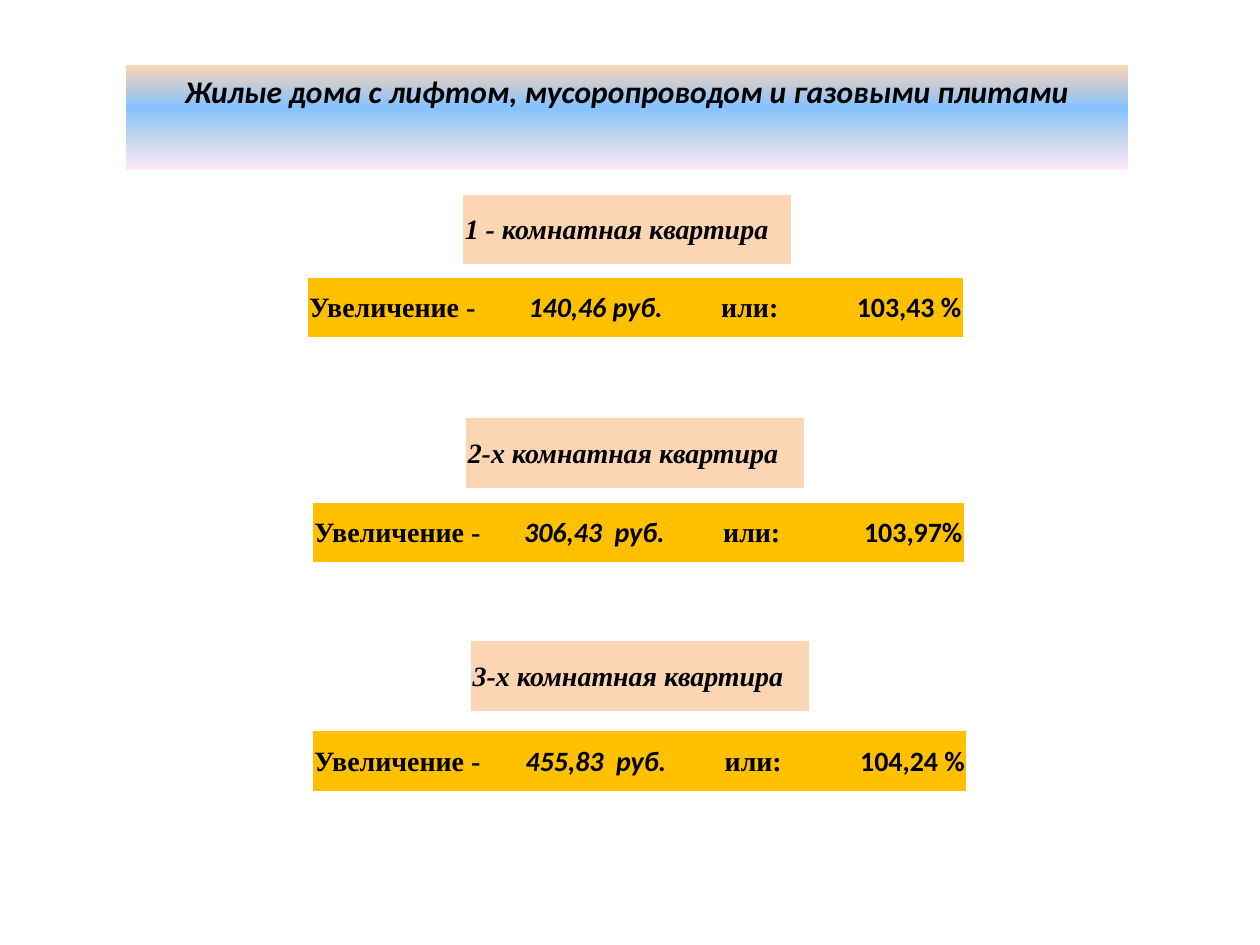
from lxml import etree
from pptx import Presentation
from pptx.dml.color import RGBColor
from pptx.enum.text import MSO_ANCHOR, MSO_AUTO_SIZE, PP_ALIGN
from pptx.oxml.ns import qn
from pptx.util import Cm, Pt

LEFT, CENTER, RIGHT = PP_ALIGN.LEFT, PP_ALIGN.CENTER, PP_ALIGN.RIGHT
TOP, MIDDLE = MSO_ANCHOR.TOP, MSO_ANCHOR.MIDDLE
GROW = MSO_AUTO_SIZE.SHAPE_TO_FIT_TEXT

BLACK = RGBColor(0x00, 0x00, 0x00)
PEACH = RGBColor(0xFC, 0xD5, 0xB5)
AMBER = RGBColor(0xFF, 0xC0, 0x00)
SKY = RGBColor(0x85, 0xC2, 0xFF)
PALE_BLUE = RGBColor(0xC4, 0xD6, 0xEB)
PALE_PINK = RGBColor(0xFF, 0xEB, 0xFA)
TITLE_STOPS = [(0, PEACH), (40, SKY), (70, PALE_BLUE), (100, PALE_PINK)]

SANS, SERIF = "Calibri", "Times New Roman"
PLAIN_TABLE_STYLE = "{2D5ABB26-0587-4C30-8999-92F81FD0307C}"
CELL_MARGIN = 0.03
LABEL_HEIGHT, INCREASE_HEIGHT = 1.4, 1.2

# Flat: label text, (left, top, width) of the label,
# (left, top) and column widths of the increase row, roubles, per cent
FLATS = [
    ("1 - комнатная квартира", (9.34, 3.93, 6.6),
     (6.2, 5.6), (3.81, 3.38, 3.38, 2.64), "140,46 руб.", "103,43 %"),
    ("2-х комнатная квартира", (9.4, 8.43, 6.8),
     (6.3, 10.13), (4.11, 3.02, 3.38, 2.62), "306,43  руб.", "103,97%"),
    ("3-х комнатная квартира", (9.5, 12.93, 6.8),
     (6.3, 14.74), (3.73, 3.43, 3.38, 2.64), "455,83  руб.", "104,24 %"),
]


def write_text(frame, text, font=SERIF, size=16, italic=False, align=LEFT):
    """Put one bold line of text in a frame."""
    para = frame.paragraphs[0]
    para.alignment = align
    span = para.add_run()
    span.text = text
    span.font.name = font
    span.font.size = Pt(size)
    span.font.bold = True
    span.font.italic = italic
    span.font.color.rgb = BLACK


def fill_gradient(shape, stops):
    """Fill a shape from top to bottom with (per cent, colour) stops."""
    shape.fill.gradient()
    shape.fill.gradient_angle = 270
    stop_list = shape.fill.gradient_stops[0]._gs.getparent()
    for stop in list(stop_list):
        stop_list.remove(stop)
    for percent, colour in stops:
        stop = etree.SubElement(stop_list, qn("a:gs"), pos=str(percent * 1000))
        etree.SubElement(stop, qn("a:srgbClr"), val=str(colour))


def add_title(page, text):
    title = page.shapes.title
    title.left, title.top = Cm(2.54), Cm(1.32)
    title.width, title.height = Cm(20.2), Cm(1.02)
    fill_gradient(title, TITLE_STOPS)
    frame = title.text_frame
    frame.word_wrap = True
    frame.auto_size = GROW
    frame.vertical_anchor = TOP
    write_text(frame, text, font=SANS, size=18, italic=True, align=CENTER)


def add_row_table(page, left, top, widths, height, colour, cells):
    """Add a one-row table; each cell is (text, text format, left margin)."""
    frame = page.shapes.add_table(1, len(cells), Cm(left), Cm(top),
                                  Cm(sum(widths)), Cm(height))
    table = frame.table
    table.first_row = table.horz_banding = False
    table._tbl.tblPr.find(qn("a:tableStyleId")).text = PLAIN_TABLE_STYLE
    table.rows[0].height = Cm(height)
    for index, (text, text_format, margin) in enumerate(cells):
        table.columns[index].width = Cm(widths[index])
        cell = table.cell(0, index)
        cell.fill.solid()
        cell.fill.fore_color.rgb = colour
        cell.vertical_anchor = MIDDLE
        cell.margin_left = Cm(margin)
        cell.margin_top = cell.margin_right = Cm(CELL_MARGIN)
        cell.margin_bottom = 0
        write_text(cell.text_frame, text, **text_format)


def add_flat(page, label, label_place, row_place, widths, roubles, percent):
    # Flat label
    left, top, width = label_place
    add_row_table(page, left, top, [width], LABEL_HEIGHT, PEACH,
                  [(label, {"italic": True}, CELL_MARGIN)])
    # Increase in roubles and per cent
    add_row_table(page, *row_place, widths, INCREASE_HEIGHT, AMBER, [
        ("Увеличение -", {}, CELL_MARGIN),
        (roubles, {"font": SANS, "italic": True, "align": RIGHT}, CELL_MARGIN),
        ("или:", {}, 1.15),
        (percent, {"font": SANS, "align": RIGHT}, CELL_MARGIN),
    ])


def main():
    deck = Presentation()
    deck.slide_width, deck.slide_height = Cm(25.4), Cm(19.05)
    page = deck.slides.add_slide(deck.slide_layouts.get_by_name("Title Only"))
    add_title(page, "Жилые дома с лифтом, мусоропроводом и газовыми плитами")
    for flat in FLATS:
        add_flat(page, *flat)
    deck.save("out.pptx")


if __name__ == "__main__":
    main()
